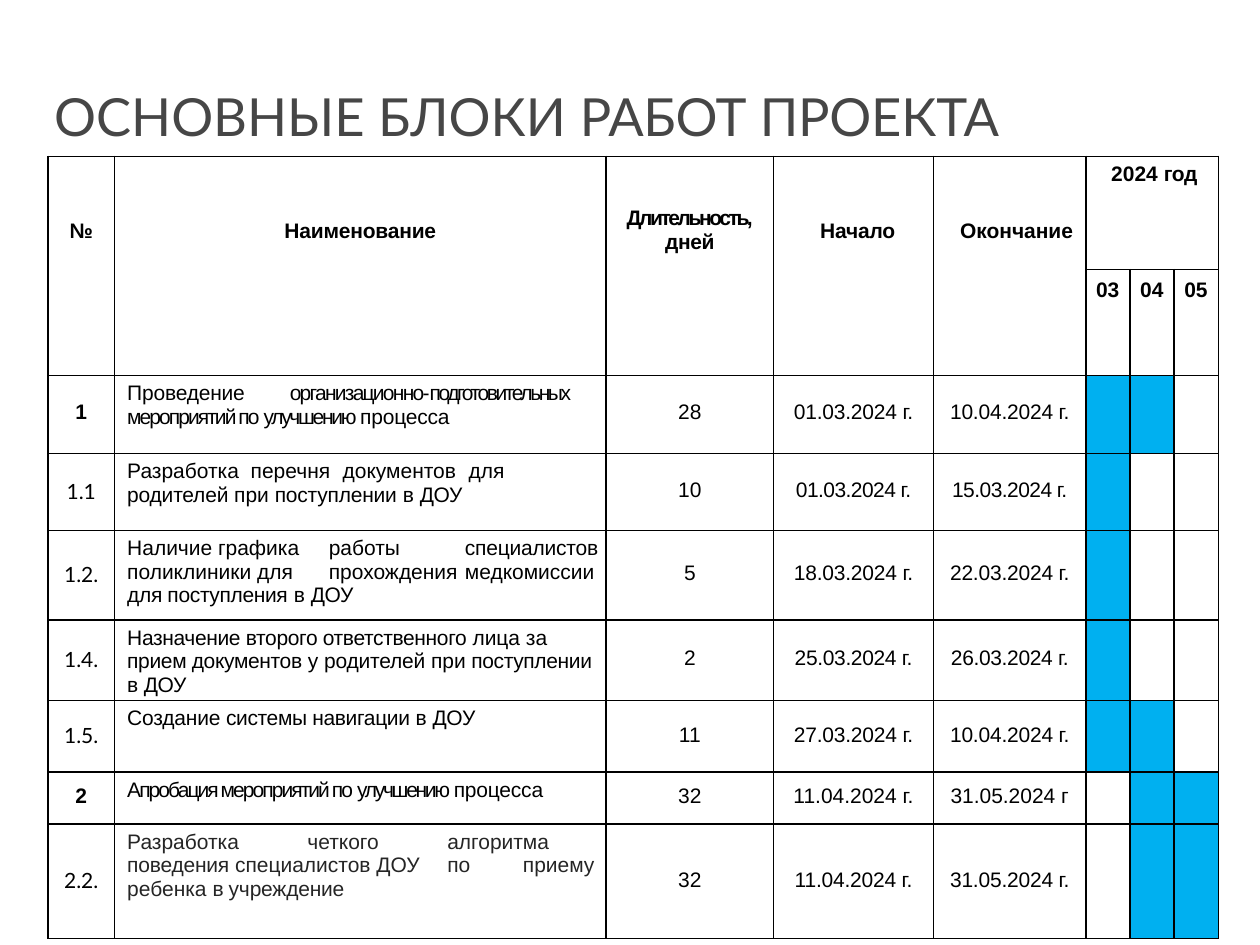
from dataclasses import dataclass
from typing import NamedTuple

from lxml.etree import SubElement
from pptx import Presentation
from pptx.dml.color import RGBColor
from pptx.enum.text import MSO_ANCHOR, MSO_AUTO_SIZE, PP_ALIGN
from pptx.oxml.ns import qn
from pptx.util import Inches, Pt


@dataclass(frozen=True)
class Theme:
    title_font: str = "Lato"
    body_font: str = "Arial"
    title_size: float = 30
    body_size: float = 12
    title: RGBColor = RGBColor(0x46, 0x46, 0x46)
    ink: RGBColor = RGBColor(0, 0, 0)
    soft_ink: RGBColor = RGBColor(0x25, 0x25, 0x25)
    active: RGBColor = RGBColor(0x00, 0xB0, 0xF0)
    border: str = "000000"


THEME = Theme()


class Piece(NamedTuple):
    text: str
    spacing: float = 0


@dataclass(frozen=True)
class Style:
    font: str = THEME.body_font
    size: float = THEME.body_size
    color: RGBColor = THEME.ink
    bold: bool = False


@dataclass(frozen=True)
class Heading:
    pieces: tuple
    row: int = 0
    column: int = 0
    top: float = 0.5
    left: float = 0
    centered: bool = False


@dataclass(frozen=True)
class Task:
    number: str
    name: tuple
    days: str
    start: str
    end: str
    months: str
    height: float
    top: float
    tabs: tuple = ()
    date_spacing: float = -0.1
    name_color: RGBColor = THEME.ink


BREAK = Piece("\v")
MONTHS = ("03", "04", "05")
COLUMN_WIDTHS = (0.53, 3.9, 1.33, 1.27, 1.21, 0.35, 0.35, 0.35)
HEADER_HEIGHTS = (0.9, 0.84)
FIRST_MONTH = 5

HEADINGS = [
    Heading((Piece("№", -0.5),), column=0, centered=True),
    Heading((Piece("Наименование", -0.1),), column=1, centered=True),
    Heading((Piece("Длительность,", -1.4), BREAK, Piece("дней", -0.2)),
            column=2, top=0.4, centered=True),
    Heading((Piece("Начало", -0.1),), column=3, left=0.37),
    Heading((Piece("Окончание"),), column=4, left=0.21),
    Heading((Piece("2024 "), Piece("год", -0.2)), column=FIRST_MONTH, top=0.05, left=0.2),
] + [
    Heading((Piece(month),), row=1, column=FIRST_MONTH + i, top=0.07, left=0.08)
    for i, month in enumerate(MONTHS)
]

TASKS = (
    Task("1", (Piece("Проведение\t", -0.1), Piece("организационно-", -1),
               Piece("подготовительных", -1.4), Piece(" мероприятий по ", -1.1),
               Piece("улучшению ", -1.3), Piece("процесса", -0.1)),
         "28", "01.03.2024 г.", "10.04.2024 г.", "03 04", 0.62, 0.2, (1.29,)),
    Task("1.1", (Piece("Разработка\tперечня\tдокументов\tдля"), BREAK,
                 Piece("родителей ", -0.1), Piece("при "), Piece("поступлении ", -0.1),
                 Piece("в "), Piece("ДОУ", -0.2)),
         "10", "01.03.2024 г.", "15.03.2024 г.", "03", 0.61, 0.2,
         (0.98, 1.71, 2.71), date_spacing=-0.3),
    Task("1.2.", (Piece("Наличие графика\tработы\t"), Piece("специалистов", -0.1), BREAK,
                  Piece("поликлиники для\tпрохождения\tмедкомиссии"), BREAK,
                  Piece("для поступления", -0.2), Piece(" в "), Piece("ДОУ", -0.2)),
         "5", "18.03.2024 г.", "22.03.2024 г.", "03", 0.71, 0.25, (1.6, 2.68)),
    Task("1.4.", (Piece("Назначение второго ответственного ", -0.2), Piece("лица за "),
                  Piece("прием документов ", -0.2), Piece("у "), Piece("родителей ", -0.1),
                  Piece("при"), Piece(" поступлении ", -0.2), Piece("в"), Piece(" ДОУ", -0.2)),
         "2", "25.03.2024 г.", "26.03.2024 г.", "03", 0.64, 0.21, date_spacing=-0.2),
    Task("1.5.", (Piece("Создание", -0.1), Piece(" системы навигации ", -0.2),
                  Piece("в "), Piece("ДОУ", -0.2)),
         "11", "27.03.2024 г.", "10.04.2024 г.", "03 04", 0.57, 0.18),
    Task("2", (Piece("Апробация мероприятий по ", -1.1), Piece("улучшению ", -1.3),
               Piece("процесса", -0.1)),
         "32", "11.04.2024 г.", "31.05.2024 г", "04 05", 0.41, 0.1, date_spacing=0),
    Task("2.2.", (Piece("Разработка\tчеткого\tалгоритма"), BREAK, Piece("поведения ", -0.1),
                  Piece("специалистов ДОУ\tпо\tприему"), BREAK, Piece("ребенка "),
                  Piece("в ", -0.5), Piece("учреждение", -0.1)),
         "32", "11.04.2024 г.", "31.05.2024 г.", "04 05", 0.91, 0.35,
         (1.43, 2.54, 3.14), name_color=THEME.soft_ink),
)


def write_pieces(paragraph, pieces: tuple, style: Style) -> None:
    for piece in pieces:
        if piece == BREAK:
            paragraph.add_line_break()
            continue
        run = paragraph.add_run()
        run.text = piece.text
        run.font.name = style.font
        run.font.size = Pt(style.size)
        run.font.bold = style.bold
        run.font.color.rgb = style.color
        if piece.spacing:
            run.font._element.set("spc", str(round(piece.spacing * 100)))


def set_tabs(paragraph, stops: tuple) -> None:
    tab_list = SubElement(paragraph._p.get_or_add_pPr(), qn("a:tabLst"))
    for stop in stops:
        SubElement(tab_list, qn("a:tab"), pos=str(Inches(stop)), algn="l")


def clear_cell(cell) -> None:
    """Remove margins and fill, and draw a thin border on all four sides."""
    cell.margin_left = cell.margin_right = cell.margin_top = cell.margin_bottom = 0
    properties = cell._tc.get_or_add_tcPr()
    for side in ("lnL", "lnR", "lnT", "lnB"):
        line = SubElement(properties, qn(f"a:{side}"), w=str(Pt(1)))
        SubElement(SubElement(line, qn("a:solidFill")), qn("a:srgbClr"), val=THEME.border)
    cell.fill.background()


def write_cell(cell, pieces: tuple, style: Style, top: float, left: float = 0,
               centered: bool = True, tabs: tuple = ()) -> None:
    cell.margin_top, cell.margin_left = Inches(top), Inches(left)
    paragraph = cell.text_frame.paragraphs[0]
    paragraph.alignment = PP_ALIGN.CENTER if centered else PP_ALIGN.LEFT
    if tabs:
        set_tabs(paragraph, tabs)
    write_pieces(paragraph, pieces, style)


def write_task(table, row: int, task: Task) -> None:
    is_stage = "." not in task.number
    number_style = Style(bold=True) if is_stage else Style(font=THEME.title_font)
    write_cell(table.cell(row, 0), (Piece(task.number),), number_style, task.top)
    write_cell(table.cell(row, 1), task.name, Style(color=task.name_color), 0.05,
               left=0.1, centered=False, tabs=task.tabs)
    write_cell(table.cell(row, 2), (Piece(task.days),), Style(), task.top)
    for column, date in ((3, task.start), (4, task.end)):
        write_cell(table.cell(row, column), (Piece(date, task.date_spacing),), Style(), task.top)
    for i, month in enumerate(MONTHS):
        if month in task.months.split():
            fill = table.cell(row, FIRST_MONTH + i).fill
            fill.solid()
            fill.fore_color.rgb = THEME.active


def add_title(slide) -> None:
    title = slide.shapes.title
    title.left, title.top = Inches(0.36), Inches(0)
    title.width, title.height = Inches(8.44), Inches(1.23)
    frame = title.text_frame
    frame.auto_size = MSO_AUTO_SIZE.NONE
    frame.word_wrap = True
    frame.vertical_anchor = MSO_ANCHOR.TOP
    frame.margin_left, frame.margin_top = Inches(0.07), Inches(0.67)
    frame.margin_right = frame.margin_bottom = 0
    frame.paragraphs[0].alignment = PP_ALIGN.LEFT
    write_pieces(frame.paragraphs[0],
                 (Piece("ОСНОВНЫЕ БЛОКИ "), Piece("РАБОТ ", -0.2), Piece("ПРОЕКТА", -0.1)),
                 Style(THEME.title_font, THEME.title_size, THEME.title))


def add_schedule(slide) -> None:
    heights = HEADER_HEIGHTS + tuple(task.height for task in TASKS)
    table = slide.shapes.add_table(
        len(heights), len(COLUMN_WIDTHS), Inches(0.38), Inches(1.24),
        Inches(sum(COLUMN_WIDTHS)), Inches(sum(heights))).table
    table.first_row = table.horz_banding = False
    for column, width in zip(table.columns, COLUMN_WIDTHS):
        column.width = Inches(width)
    for row, height in zip(table.rows, heights):
        row.height = Inches(height)
    for cell in table.iter_cells():
        clear_cell(cell)
    for column in range(FIRST_MONTH):
        table.cell(0, column).merge(table.cell(1, column))
    table.cell(0, FIRST_MONTH).merge(table.cell(0, len(COLUMN_WIDTHS) - 1))
    for heading in HEADINGS:
        write_cell(table.cell(heading.row, heading.column), heading.pieces, Style(bold=True),
                   heading.top, heading.left, heading.centered)
    for row, task in enumerate(TASKS, start=len(HEADER_HEIGHTS)):
        write_task(table, row, task)


def main() -> None:
    presentation = Presentation()
    presentation.slide_width, presentation.slide_height = Inches(10), Inches(7.5)
    slide = presentation.slides.add_slide(presentation.slide_layouts[5])
    add_title(slide)
    add_schedule(slide)
    presentation.save("out.pptx")


if __name__ == "__main__":
    main()
